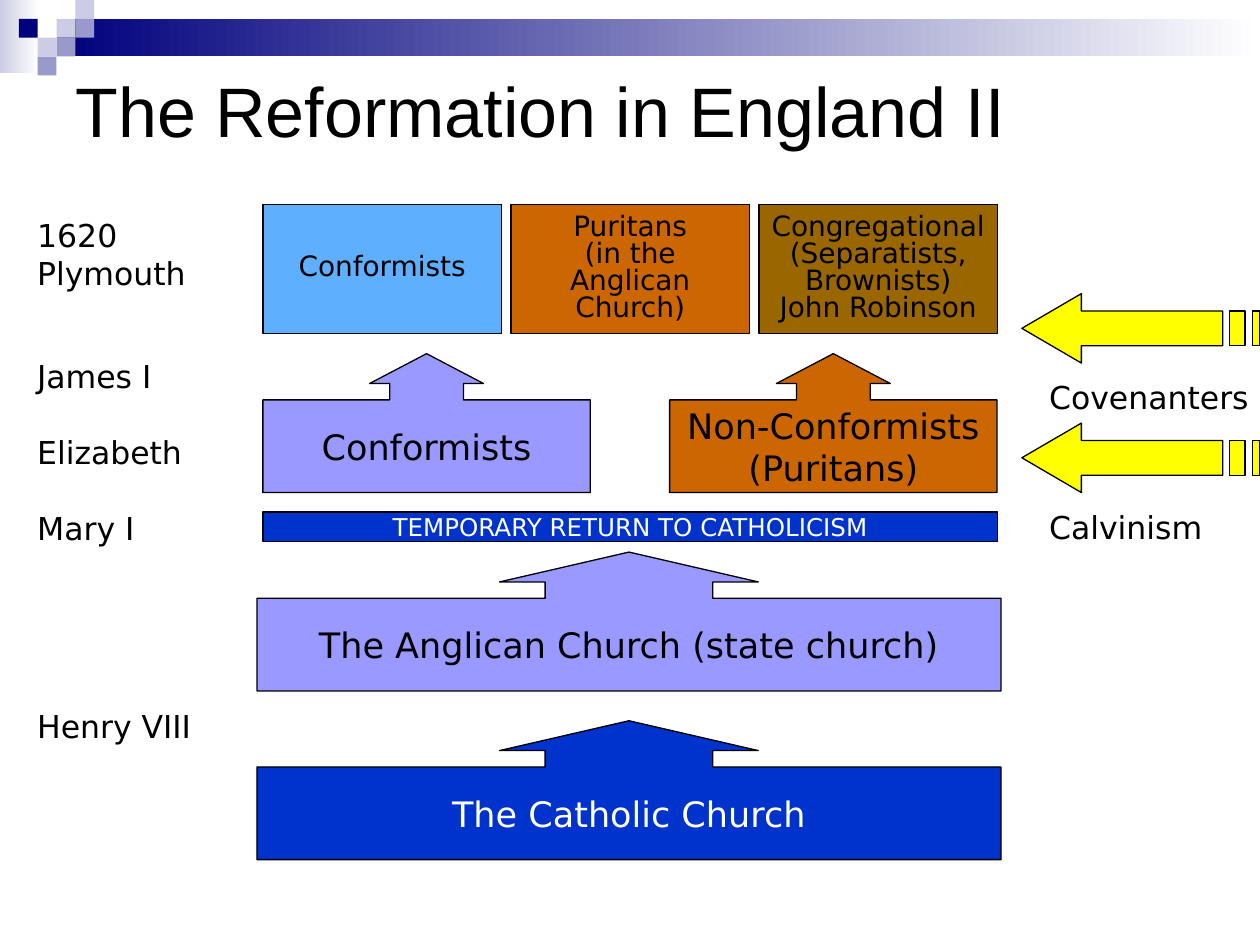
from pptx import Presentation
from pptx.dml.color import RGBColor
from pptx.enum.shapes import MSO_SHAPE
from pptx.enum.text import MSO_ANCHOR, MSO_AUTO_SIZE, PP_ALIGN
from pptx.util import Cm, Pt

RECT = MSO_SHAPE.RECTANGLE
CALLOUT = MSO_SHAPE.UP_ARROW_CALLOUT
MIDDLE, TOP = MSO_ANCHOR.MIDDLE, MSO_ANCHOR.TOP
LEFT, CENTER = PP_ALIGN.LEFT, PP_ALIGN.CENTER
FIXED = MSO_AUTO_SIZE.NONE
hue = RGBColor.from_string

BLACK, WHITE = "000000", "FFFFFF"
NAVY, MIST, LILAC = "00007D", "CCCCE6", "9999CC"
BLUE, VIOLET, ORANGE = "0033CC", "9999FF", "CC6600"
BROWN, SKY, YELLOW = "996600", "5FAFFF", "FFFF00"


def paint(shape, color, edge=True):
    shape.shadow.inherit = False
    shape.fill.solid()
    shape.fill.fore_color.rgb = hue(color)
    if edge:
        shape.line.color.rgb = hue(BLACK)
        shape.line.width = Pt(0.75)
    else:
        shape.line.fill.background()


def write(shape, paras, size, color=BLACK, font="DejaVu Sans",
          align=CENTER, anchor=MIDDLE, space=1.0, wrap=True):
    """Fill a shape with paragraphs; a newline inside one is a line break."""
    frame = shape.text_frame
    frame.word_wrap = wrap
    frame.auto_size = FIXED
    frame.vertical_anchor = anchor
    for i, text in enumerate(paras):
        para = frame.paragraphs[0] if i == 0 else frame.add_paragraph()
        para.alignment = align
        para.line_spacing = space
        for j, part in enumerate(text.split("\n")):
            if j:
                para.add_line_break()
            run = para.add_run()
            run.text = part
            run.font.size = Pt(size)
            run.font.name = font
            run.font.color.rgb = hue(color)


prs = Presentation()
prs.slide_width, prs.slide_height = Cm(25.4), Cm(19.05)
slide = prs.slides.add_slide(prs.slide_layouts[5])
shapes = slide.shapes

# Title
title = shapes.title
title.left, title.top = Cm(1.27), Cm(1.07)
title.width, title.height = Cm(22.86), Cm(2.26)
write(title, ["The Reformation in England II"], 40, font="Arial", align=LEFT)

# Header bands and mosaic
bands = [(0, 0, 0.79, 1.47, MIST), (1.14, 0.38, 24.26, 0.76, NAVY)]
for x, y, w, h, color in bands:
    band = shapes.add_shape(RECT, Cm(x), Cm(y), Cm(w), Cm(h))
    paint(band, color, edge=False)
    band.fill.gradient()
    band.fill.gradient_angle = 0
    for stop, tone in zip(band.fill.gradient_stops, (color, WHITE)):
        stop.color.rgb = hue(tone)

TILE = 0.38
tiles = [(3, 1, MIST), (4, 0, MIST), (4, 1, LILAC), (2, 2, MIST),
         (1, 1, NAVY), (3, 2, LILAC), (2, 3, LILAC)]
for col, row, color in tiles:
    tile = shapes.add_shape(RECT, Cm(col * TILE), Cm(row * TILE),
                            Cm(TILE), Cm(TILE))
    paint(tile, color, edge=False)

# Churches with arrows pointing up
WIDE, SLIM = (1.207, 0.932, 0.215, 0.667), (0.531, 0.41, 0.215, 0.667)
churches = [
    (5.18, 14.53, 15, WIDE, BLUE, WHITE, ["The Catholic Church"]),
    (5.18, 11.13, 15, WIDE, VIOLET, BLACK,
     ["The Anglican Church (state church)"]),
    (5.3, 7.13, 6.6, SLIM, VIOLET, BLACK, ["Conformists"]),
    (13.5, 7.13, 6.6, SLIM, ORANGE, BLACK, ["Non-Conformists", "(Puritans)"]),
]
for x, y, w, ratios, color, ink, paras in churches:
    church = shapes.add_shape(CALLOUT, Cm(x), Cm(y), Cm(w), Cm(2.8))
    for i, ratio in enumerate(ratios):
        church.adjustments[i] = ratio
    paint(church, color)
    write(church, paras, 20, ink, wrap=False)

# Groups of 1620
groups = [
    (SKY, ["Conformists"]),
    (ORANGE, ["Puritans\n(in the Anglican Church)"]),
    (BROWN, ["Congregational", "(Separatists, Brownists)", "John Robinson"]),
]
for i, (color, paras) in enumerate(groups):
    group = shapes.add_shape(RECT, Cm(5.3 + 5 * i), Cm(4.12),
                             Cm(4.81), Cm(2.6))
    paint(group, color)
    write(group, paras, 16, space=0.8)
    group.text_frame.margin_left = group.text_frame.margin_right = Cm(0.23)

# Mary's interlude
strip = shapes.add_shape(RECT, Cm(5.3), Cm(10.32), Cm(14.81), Cm(0.6))
paint(strip, BLUE)
write(strip, ["TEMPORARY RETURN TO CATHOLICISM"], 14, WHITE, wrap=False)

# Rulers on the left, influences on the right
labels = [
    (0.5, 4.24, 4.6, 1.8, 1, ["1620 Plymouth"]),
    (0.5, 6.32, 4.2, 3.07, 2, ["James I", "Elizabeth"]),
    (0.5, 10.13, 4.2, 1.02, 1, ["Mary I"]),
    (0.5, 14.12, 4.2, 1.02, 1, ["Henry VIII"]),
    (20.9, 7.5, 4.6, 1.02, 1, ["Covenanters"]),
    (20.9, 10.12, 4.6, 1.02, 1, ["Calvinism"]),
]
for x, y, w, h, space, paras in labels:
    label = shapes.add_textbox(Cm(x), Cm(y), Cm(w), Cm(h))
    write(label, paras, 18, align=LEFT, anchor=TOP, space=float(space))

# Striped arrows coming in from the right
HEAD = [(21.8, 0), (21.8, 0.35), (24.65, 0.35), (24.65, 1.05),
        (21.8, 1.05), (21.8, 1.4), (20.6, 0.7)]
STRIPES = [[(right, 0.35), (right, 1.05), (left, 1.05), (left, 0.35)]
           for left, right in ((24.79, 25.1), (25.25, 25.4))]
for top in (5.92, 8.53):
    outlines = [[(Cm(x), Cm(top + y)) for x, y in outline]
                for outline in [HEAD] + STRIPES]
    pen = shapes.build_freeform(*outlines[0][0])
    for i, (start, *rest) in enumerate(outlines):
        if i:
            pen.move_to(*start)
        pen.add_line_segments(rest, close=True)
    paint(pen.convert_to_shape(), YELLOW)

prs.save("out.pptx")
